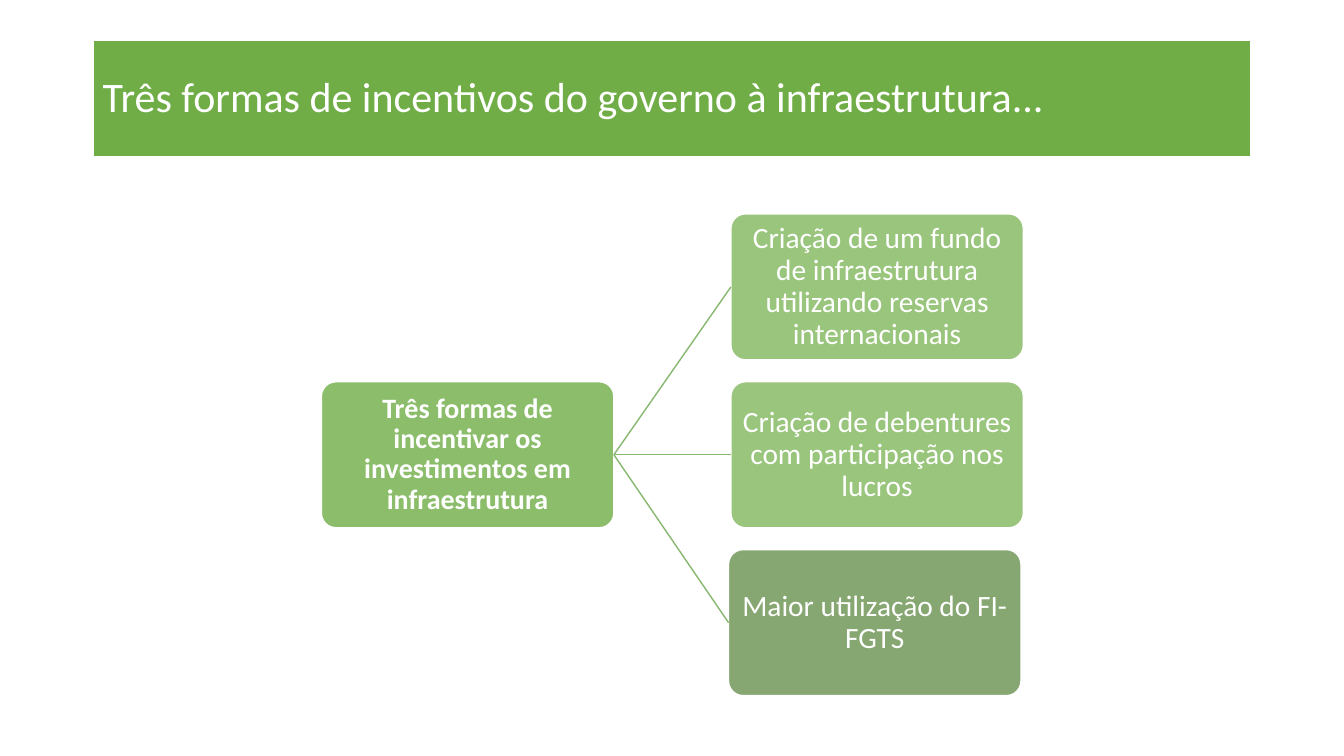
from dataclasses import dataclass
from lxml.etree import SubElement
from pptx import Presentation
from pptx.dml.color import RGBColor
from pptx.enum.shapes import MSO_CONNECTOR, MSO_SHAPE
from pptx.enum.text import MSO_ANCHOR, PP_ALIGN
from pptx.oxml.ns import qn
from pptx.util import Cm, Pt


@dataclass(frozen=True)
class Theme:
    font: str = "Calibri"
    white: RGBColor = RGBColor.from_string("FFFFFF")
    green: RGBColor = RGBColor.from_string("70AD47")
    dark: RGBColor = RGBColor.from_string("548235")
    link: RGBColor = RGBColor.from_string("88B76F")
    title: int = 30
    root: int = 20
    leaf: int = 21


theme = Theme()


def add_box(kind, left, top, width, height, text, size, color, edge):
    """Add a filled shape with white text, centred vertically."""
    box = slide.shapes.add_shape(kind, Cm(left), Cm(top), Cm(width), Cm(height))
    box.shadow.inherit = False
    box.fill.solid()
    box.fill.fore_color.rgb = color
    box.line.color.rgb = theme.white
    box.line.width = Pt(edge)
    frame = box.text_frame
    frame.word_wrap = True
    frame.vertical_anchor = MSO_ANCHOR.MIDDLE
    frame.text = text
    para = frame.paragraphs[0]
    para.alignment = PP_ALIGN.LEFT
    para.line_spacing = 0.9
    font = para.runs[0].font
    font.name = theme.font
    font.size = Pt(size)
    font.color.rgb = theme.white
    return box


def add_node(left, top, text, size, color, alpha):
    """Add a translucent rounded box of the diagram; alpha is in percent."""
    node = add_box(MSO_SHAPE.ROUNDED_RECTANGLE, left, top, node_w, node_h,
                   text, size, color, 1)
    node.adjustments[0] = 0.1
    tint = node.fill._xPr.find(qn("a:solidFill"))[0]
    SubElement(tint, qn("a:alpha"), val=str(alpha * 1000))
    frame = node.text_frame
    frame.margin_left = frame.margin_right = Cm(0.03)
    frame.margin_top = frame.margin_bottom = Cm(0.03)
    frame.paragraphs[0].alignment = PP_ALIGN.CENTER
    return node


deck = Presentation()
deck.slide_width, deck.slide_height = Cm(33.87), Cm(19.05)
slide = deck.slides.add_slide(deck.slide_layouts[6])

# Title band
add_box(MSO_SHAPE.RECTANGLE, 2.34, 1.02, 29.2, 2.95,
        "Três formas de incentivos do governo à infraestrutura...",
        theme.title, theme.green, 1.5)

# Root of the tree
node_w, node_h = 7.37, 3.68
mid, pitch = 9.62, 4.23
root = add_node(8.1, mid, "Três formas de incentivar os investimentos em infraestrutura",
                theme.root, theme.green, 80)
root.text_frame.paragraphs[0].runs[0].font.bold = True

# Leaves, each joined to the root
leaves = [
    (18.42, "Criação de um fundo de infraestrutura utilizando reservas internacionais",
     theme.green),
    (18.42, "Criação de debentures com participação nos lucros", theme.green),
    (18.36, "Maior utilização do FI-FGTS", theme.dark),
]
for row, (left, text, color) in enumerate(leaves):
    leaf = add_node(left, mid + (row - 1) * pitch, text, theme.leaf, color, 70)
    link = slide.shapes.add_connector(MSO_CONNECTOR.STRAIGHT, 0, 0, 0, 0)
    link.begin_connect(root, 3)
    link.end_connect(leaf, 1)
    link.line.color.rgb = theme.link
    link.line.width = Pt(1)
    SubElement(link._element.spPr, qn("a:effectLst"))

deck.save("out.pptx")
